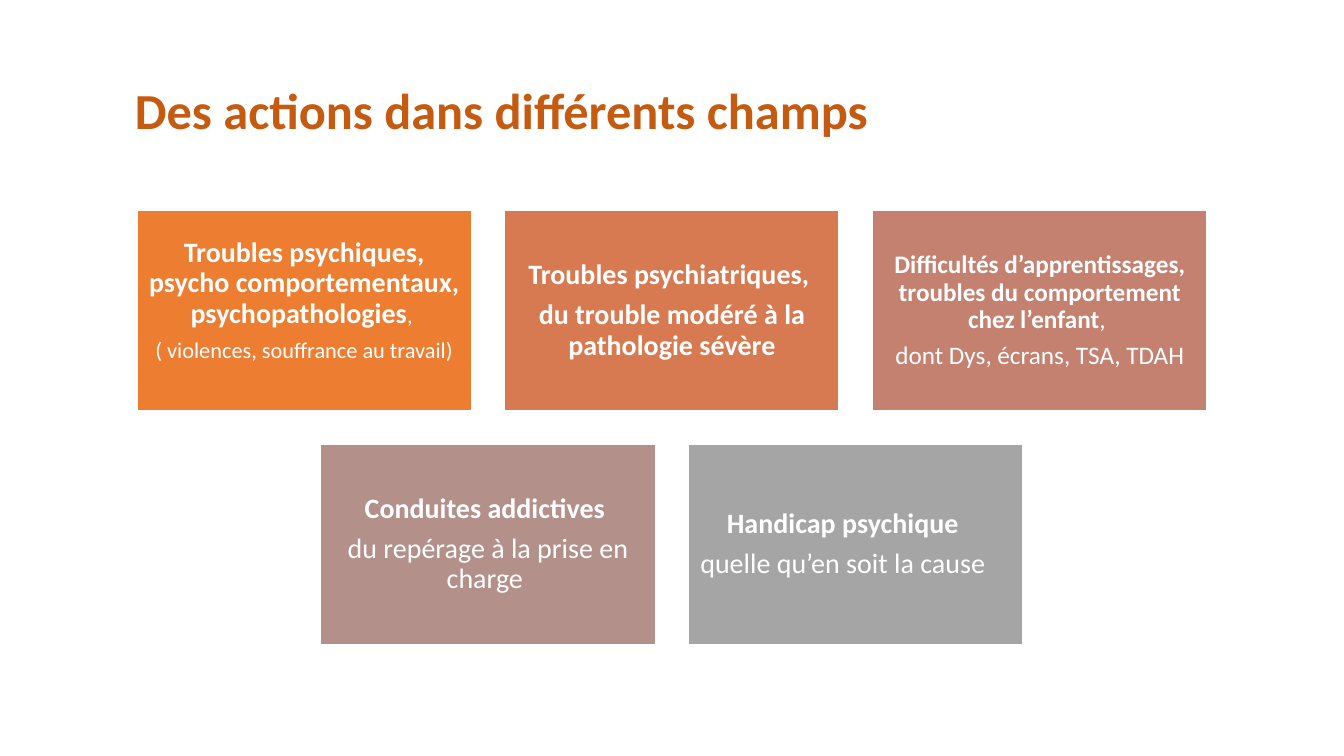
from dataclasses import dataclass

from pptx import Presentation
from pptx.dml.color import RGBColor
from pptx.enum.shapes import MSO_SHAPE
from pptx.enum.text import MSO_ANCHOR, PP_ALIGN
from pptx.util import Cm, Pt


@dataclass(frozen=True)
class Theme:
    font: str = "Calibri"
    title_color: str = "C55A11"
    white: str = "FFFFFF"
    card_fills: tuple = ("ED7D31", "D87A51", "C48170", "B4908B", "A5A5A5")
    title_size: int = 36
    large: int = 20
    medium: int = 18
    small: int = 16


THEME = Theme()

# Card grid, in centimetres
CARDS_PER_ROW = 3
GRID_LEFT, GRID_TOP = 3.45, 5.31
CARD_WIDTH, CARD_HEIGHT = 8.43, 5.05
COLUMN_STEP, ROW_STEP = 9.27, 5.89


@dataclass(frozen=True)
class Card:
    heading: str
    detail: str
    heading_size: int = THEME.large
    detail_size: int = THEME.large
    detail_bold: bool = False
    comma: str = ""  # light punctuation closing the heading
    inset: float = 0.2
    bottom_inset: float = 0.2
    heading_right_indent: float = 0


CARDS = (
    Card("Troubles psychiques, psycho comportementaux, psychopathologies",
         "( violences, souffrance au travail)", detail_size=THEME.small,
         comma=", ", inset=0.13, bottom_inset=0.64),
    Card("Troubles psychiatriques, ",
         "du trouble modéré à la pathologie sévère", detail_bold=True),
    Card("Difficultés d’apprentissages, troubles du comportement chez l’enfant",
         " dont Dys, écrans, TSA, TDAH ", heading_size=THEME.medium,
         detail_size=THEME.medium, comma=", ", inset=0.18, bottom_inset=0.18),
    Card("Conduites addictives ", "du repérage à la prise en charge "),
    Card("Handicap psychique", "quelle qu’en soit la cause",
         heading_right_indent=0.66),
)


def add_span(para, text, *, size, color, bold=False):
    span = para.add_run()
    span.text = text
    span.font.name = THEME.font
    span.font.size = Pt(size)
    span.font.bold = bold
    span.font.color.rgb = RGBColor.from_string(color)


def format_para(para, *, align=PP_ALIGN.CENTER, space_after=0, right_indent=0):
    para.alignment = align
    para.line_spacing = 0.9
    para.space_after = Pt(space_after)
    if right_indent:
        para._p.get_or_add_pPr().set("marR", str(Cm(right_indent)))


def add_title(page, text):
    box = page.shapes.add_textbox(Cm(3.15), Cm(1.02), Cm(29.21), Cm(3.68))
    frame = box.text_frame
    frame.word_wrap = True
    frame.vertical_anchor = MSO_ANCHOR.MIDDLE
    para = frame.paragraphs[0]
    format_para(para, align=PP_ALIGN.LEFT)
    add_span(para, text, size=THEME.title_size, color=THEME.title_color, bold=True)


def add_card(page, card, left, top, fill):
    box = page.shapes.add_shape(MSO_SHAPE.RECTANGLE, Cm(left), Cm(top),
                                Cm(CARD_WIDTH), Cm(CARD_HEIGHT))
    box.shadow.inherit = False
    box.fill.solid()
    box.fill.fore_color.rgb = RGBColor.from_string(fill)
    box.line.color.rgb = RGBColor.from_string(THEME.white)
    box.line.width = Pt(1)

    frame = box.text_frame
    frame.word_wrap = True
    frame.vertical_anchor = MSO_ANCHOR.MIDDLE
    frame.margin_left = frame.margin_right = frame.margin_top = Cm(card.inset)
    frame.margin_bottom = Cm(card.bottom_inset)

    heading = frame.paragraphs[0]
    format_para(heading, space_after=0.35 * card.heading_size,
                right_indent=card.heading_right_indent)
    add_span(heading, card.heading, size=card.heading_size,
             color=THEME.white, bold=True)
    if card.comma:
        add_span(heading, card.comma, size=card.detail_size, color=THEME.white)

    detail = frame.add_paragraph()
    format_para(detail)
    add_span(detail, card.detail, size=card.detail_size,
             color=THEME.white, bold=card.detail_bold)


def add_cards(page):
    for index, (card, fill) in enumerate(zip(CARDS, THEME.card_fills)):
        row, column = divmod(index, CARDS_PER_ROW)
        row_count = min(CARDS_PER_ROW, len(CARDS) - row * CARDS_PER_ROW)
        # A shorter row is centred under the full one
        shift = (CARDS_PER_ROW - row_count) / 2
        add_card(page, card, GRID_LEFT + (column + shift) * COLUMN_STEP,
                 GRID_TOP + row * ROW_STEP, fill)


def main():
    deck = Presentation()
    deck.slide_width, deck.slide_height = Cm(33.87), Cm(19.05)
    page = deck.slides.add_slide(deck.slide_layouts[6])
    add_title(page, "Des actions dans différents champs")
    add_cards(page)
    deck.save("out.pptx")


if __name__ == "__main__":
    main()
